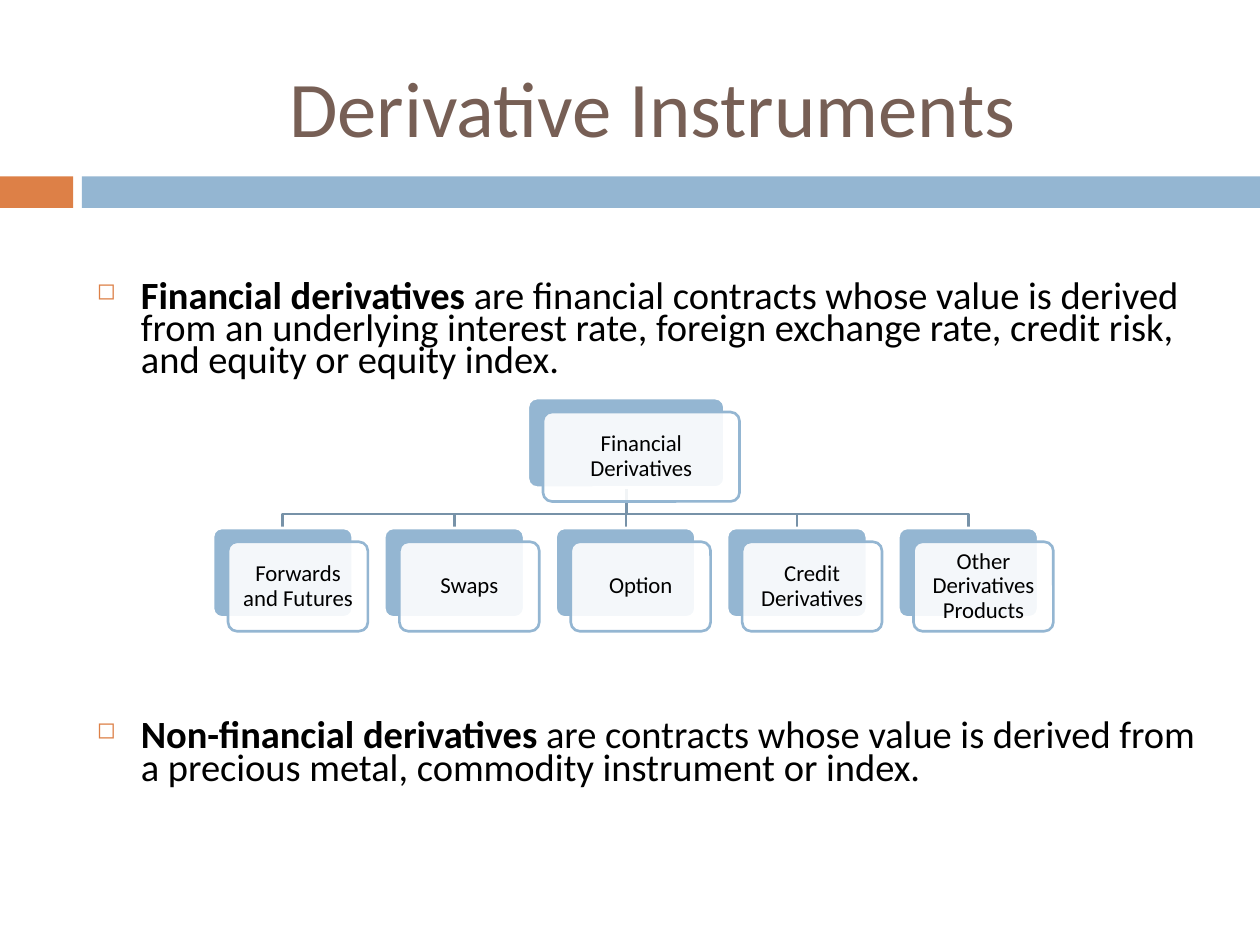
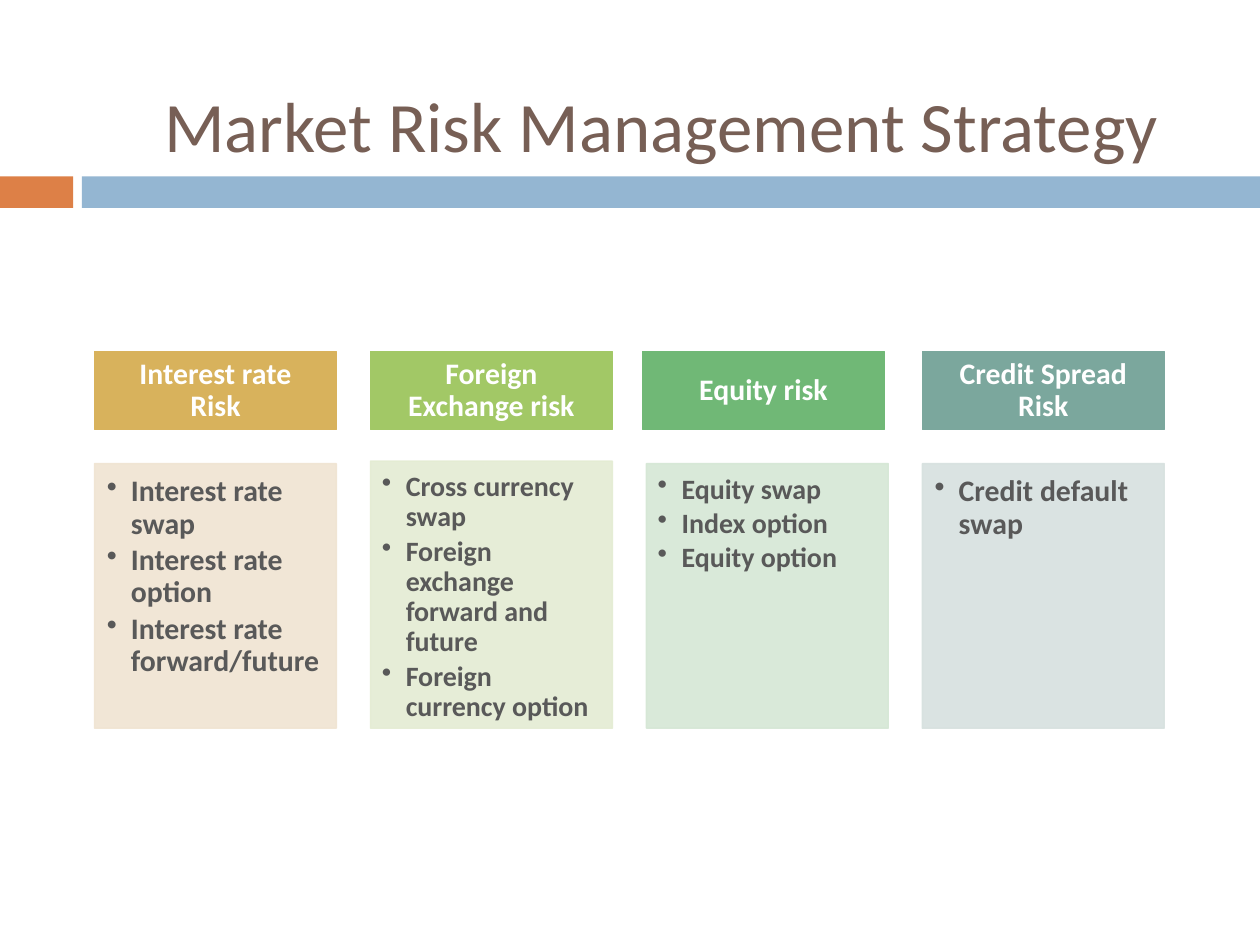
from dataclasses import dataclass

from lxml import etree
from pptx import Presentation
from pptx.dml.color import RGBColor
from pptx.enum.shapes import MSO_CONNECTOR, MSO_SHAPE
from pptx.enum.text import MSO_ANCHOR, PP_ALIGN
from pptx.oxml.ns import qn
from pptx.util import Inches, Pt

RECTANGLE = MSO_SHAPE.RECTANGLE
ROUNDED = MSO_SHAPE.ROUNDED_RECTANGLE
STRAIGHT = MSO_CONNECTOR.STRAIGHT
TOP, MIDDLE = MSO_ANCHOR.TOP, MSO_ANCHOR.MIDDLE
LEFT, CENTER = PP_ALIGN.LEFT, PP_ALIGN.CENTER

FONT = "Calibri"
WHITE = RGBColor(0xFF, 0xFF, 0xFF)
BLACK = RGBColor(0x00, 0x00, 0x00)
BROWN = RGBColor(0x77, 0x5F, 0x55)
ORANGE = RGBColor(0xDD, 0x80, 0x47)
BLUE = RGBColor(0x94, 0xB6, 0xD2)
STEEL = RGBColor(0x77, 0x92, 0xA8)
GRAY = RGBColor(0x59, 0x59, 0x59)
GOLD, SAND = RGBColor(0xD8, 0xB2, 0x5C), RGBColor(0xF0, 0xE4, 0xD2)
LIME, PALE_LIME = RGBColor(0xA2, 0xC8, 0x66), RGBColor(0xE4, 0xEC, 0xD3)
GREEN, PALE_GREEN = RGBColor(0x70, 0xB8, 0x76), RGBColor(0xD5, 0xE7, 0xD5)
TEAL, PALE_TEAL = RGBColor(0x7B, 0xA7, 0x9D), RGBColor(0xD7, 0xE1, 0xDF)


@dataclass
class Area:
    """A rectangle on the page, in inches."""
    left: float
    top: float
    width: float
    height: float

    def lengths(self) -> list:
        """Return the four measures as lengths."""
        return [Inches(v) for v in (self.left, self.top, self.width, self.height)]


@dataclass
class Definition:
    """A bulleted statement that opens with a bold term."""
    top: float
    term: str
    rest: str


@dataclass
class RiskColumn:
    """A risk and the instruments that manage it."""
    risk: str
    instruments: list[str]
    header_color: RGBColor
    panel_color: RGBColor
    header_shift: float = 0
    panel_top: float = 3.68
    size: int = 17
    insets: tuple = (0.1, 0.1, 0.12, 0.15)


SMALL_INSETS = (0.09, 0.09, 0.14, 0.14)
DEFINITIONS = [
    Definition(2.2, "Financial derivatives ",
               "are financial contracts whose value is derived from an underlying interest "
               "rate, foreign exchange rate, credit risk, and equity or equity index."),
    Definition(5.69, "Non-financial derivatives",
               " are contracts whose value is derived from a precious metal, commodity "
               "instrument or index."),
]
ROOT = Area(4.19, 3.16, 1.56, 0.71)
BRANCHES = ["Forwards and Futures", "Swaps", "Option", "Credit Derivatives",
            "Other Derivatives Products"]
BRANCH_LEFT, BRANCH_TOP, BRANCH_PITCH = 1.69, 4.19, 1.36
BRANCH_WIDTH, CARD_HEIGHT = 1.11, 0.71
TRUNK_TOP, BUS_TOP = 3.86, 4.08
COLUMN_LEFT, COLUMN_PITCH, COLUMN_WIDTH = 0.75, 2.19, 1.92
PANEL_BOTTOM = 5.78
COLUMNS = [
    RiskColumn("Interest rate Risk",
               ["Interest rate swap", "Interest rate option", "Interest rate forward/future"],
               GOLD, SAND),
    RiskColumn("Foreign Exchange risk",
               ["Cross currency swap", "Foreign exchange forward and future",
                "Foreign currency option"],
               LIME, PALE_LIME, panel_top=3.66, size=16, insets=SMALL_INSETS),
    RiskColumn("Equity risk", ["Equity swap", "Index option", "Equity option"],
               GREEN, PALE_GREEN, header_shift=-0.03, size=16, insets=SMALL_INSETS),
    RiskColumn("Credit Spread Risk", ["Credit default swap"], TEAL, PALE_TEAL),
]


def style_para(para, size: float, color: RGBColor, bold: bool = False,
               align=LEFT, spacing: float = 0.9) -> None:
    """Format a paragraph and all its runs."""
    para.alignment = align
    para.line_spacing = spacing
    for span in para.runs:
        span.font.name = FONT
        span.font.size = Pt(size)
        span.font.bold = bold
        span.font.color.rgb = color


def set_frame(frame, insets: tuple, anchor) -> None:
    """Set wrapping, margins and vertical anchor."""
    frame.word_wrap = True
    frame.vertical_anchor = anchor
    (frame.margin_left, frame.margin_top,
     frame.margin_right, frame.margin_bottom) = [Inches(v) for v in insets]


def add_bullet(para, mark: str, indent: float, color: RGBColor, percent: int = 100) -> None:
    """Give a paragraph a hanging bullet."""
    props = para._p.get_or_add_pPr()
    props.set("marL", str(Inches(indent)))
    props.set("indent", str(-Inches(indent)))
    tint = etree.SubElement(props, qn("a:buClr"))
    etree.SubElement(tint, qn("a:srgbClr"), val=str(color))
    etree.SubElement(props, qn("a:buSzPct"), val=str(percent * 1000))
    etree.SubElement(props, qn("a:buChar"), char=mark)


def make_translucent(paint) -> None:
    """Set every colour under an element to 90 % opacity."""
    for color in list(paint.iter(qn("a:srgbClr"))):
        etree.SubElement(color, qn("a:alpha"), val="90000")


def add_box(page, kind, area: Area, fill: RGBColor, line: RGBColor | None = None,
            weight: float = 0.79):
    """Draw a filled preset shape without shadow."""
    box = page.shapes.add_shape(kind, *area.lengths())
    box.shadow.inherit = False
    box.fill.solid()
    box.fill.fore_color.rgb = fill
    if line is None:
        box.line.fill.background()
    else:
        box.line.color.rgb = line
        box.line.width = Pt(weight)
    return box


def add_page(deck, title: str, area: Area, size: float):
    """Add a slide with its title and colour bands."""
    page = deck.slides.add_slide(deck.slide_layouts[5])
    heading = page.shapes.title
    heading.left, heading.top, heading.width, heading.height = area.lengths()
    heading.text_frame.text = title
    set_frame(heading.text_frame, (0.1, 0.05, 0.1, 0.05), MIDDLE)
    style_para(heading.text_frame.paragraphs[0], size, BROWN, align=CENTER, spacing=1.0)
    add_box(page, RECTANGLE, Area(0, 1.4, 0.58, 0.25), ORANGE)
    add_box(page, RECTANGLE, Area(0.65, 1.4, 9.35, 0.25), BLUE)
    return page


def add_definition(page, definition: Definition) -> None:
    """Write one bulleted definition."""
    box = page.shapes.add_textbox(*Area(0.67, definition.top, 8.92, 0.9).lengths())
    set_frame(box.text_frame, (0.1, 0.05, 0.1, 0.05), TOP)
    para = box.text_frame.paragraphs[0]
    for text in (definition.term, definition.rest):
        para.add_run().text = text
    style_para(para, 22, BLACK, spacing=0.7)
    para.runs[0].font.bold = True
    add_bullet(para, "◻", 0.35, ORANGE, 60)


def add_card(page, area: Area, text: str) -> None:
    """Draw a blue card with a translucent label card in front."""
    front_area = Area(area.left + 0.12, area.top + 0.11, area.width, area.height)
    back = add_box(page, ROUNDED, area, BLUE, WHITE, 1.5)
    front = add_box(page, ROUNDED, front_area, WHITE, BLUE, 1.5)
    for box in (back, front):
        box.adjustments[0] = 0.1
    make_translucent(front._element.spPr.find(qn("a:solidFill")))
    front.text_frame.text = text
    set_frame(front.text_frame, (0.05,) * 4, MIDDLE)
    style_para(front.text_frame.paragraphs[0], 13, BLACK, align=CENTER)


def add_branch_line(page, start: float, end: float) -> None:
    """Join the root to a branch whose centre is at end."""
    if abs(start - end) < 0.02:
        link = page.shapes.add_connector(STRAIGHT, Inches(start), Inches(TRUNK_TOP),
                                         Inches(start), Inches(BRANCH_TOP))
        etree.SubElement(link._element.spPr, qn("a:effectLst"))
    else:
        builder = page.shapes.build_freeform(Inches(start), Inches(TRUNK_TOP))
        corners = [(start, BUS_TOP), (end, BUS_TOP), (end, BRANCH_TOP)]
        builder.add_line_segments([(Inches(x), Inches(y)) for x, y in corners], close=False)
        link = builder.convert_to_shape()
        link.shadow.inherit = False
        link.fill.background()
    link.line.color.rgb = STEEL
    link.line.width = Pt(1.5)


def add_risk_column(page, index: int, column: RiskColumn) -> None:
    """Draw a risk header and the panel of instruments below it."""
    left = COLUMN_LEFT + index * COLUMN_PITCH
    header = add_box(page, RECTANGLE,
                     Area(left + column.header_shift, 2.79, COLUMN_WIDTH, 0.62),
                     column.header_color, column.header_color)
    header.text_frame.text = column.risk
    set_frame(header.text_frame, (0.14, 0.08, 0.14, 0.08), MIDDLE)
    style_para(header.text_frame.paragraphs[0], 17, WHITE, True, CENTER)

    panel_area = Area(left, column.panel_top, COLUMN_WIDTH, PANEL_BOTTOM - column.panel_top)
    panel = add_box(page, RECTANGLE, panel_area, column.panel_color, column.panel_color)
    make_translucent(panel._element.spPr)
    panel.text_frame.text = "\n".join(column.instruments)
    set_frame(panel.text_frame, column.insets, TOP)
    for para in panel.text_frame.paragraphs:
        style_para(para, column.size, GRAY, True)
        para.space_after = Pt(column.size * 0.15)
        add_bullet(para, "•", 0.19, GRAY)


def build_instruments(deck) -> None:
    """Build the slide that defines and classifies derivatives."""
    page = add_page(deck, "Derivative Instruments ", Area(1, 0.33, 8.5, 1.03), 45)
    for definition in DEFINITIONS:
        add_definition(page, definition)
    lefts = [BRANCH_LEFT + i * BRANCH_PITCH for i in range(len(BRANCHES))]
    for left in lefts:
        add_branch_line(page, ROOT.left + ROOT.width / 2, left + BRANCH_WIDTH / 2)
    add_card(page, ROOT, "Financial Derivatives")
    for left, text in zip(lefts, BRANCHES):
        add_card(page, Area(left, BRANCH_TOP, BRANCH_WIDTH, CARD_HEIGHT), text)


def build_strategy(deck) -> None:
    """Build the slide that matches risks with instruments."""
    page = add_page(deck, "Market Risk Management Strategy", Area(1, 0.3, 8.5, 1.37), 40.5)
    for index, column in enumerate(COLUMNS):
        add_risk_column(page, index, column)


def main() -> None:
    """Build and save the deck."""
    deck = Presentation()
    deck.slide_width, deck.slide_height = Inches(10), Inches(7.5)
    build_instruments(deck)
    build_strategy(deck)
    deck.save("out.pptx")


if __name__ == "__main__":
    main()
